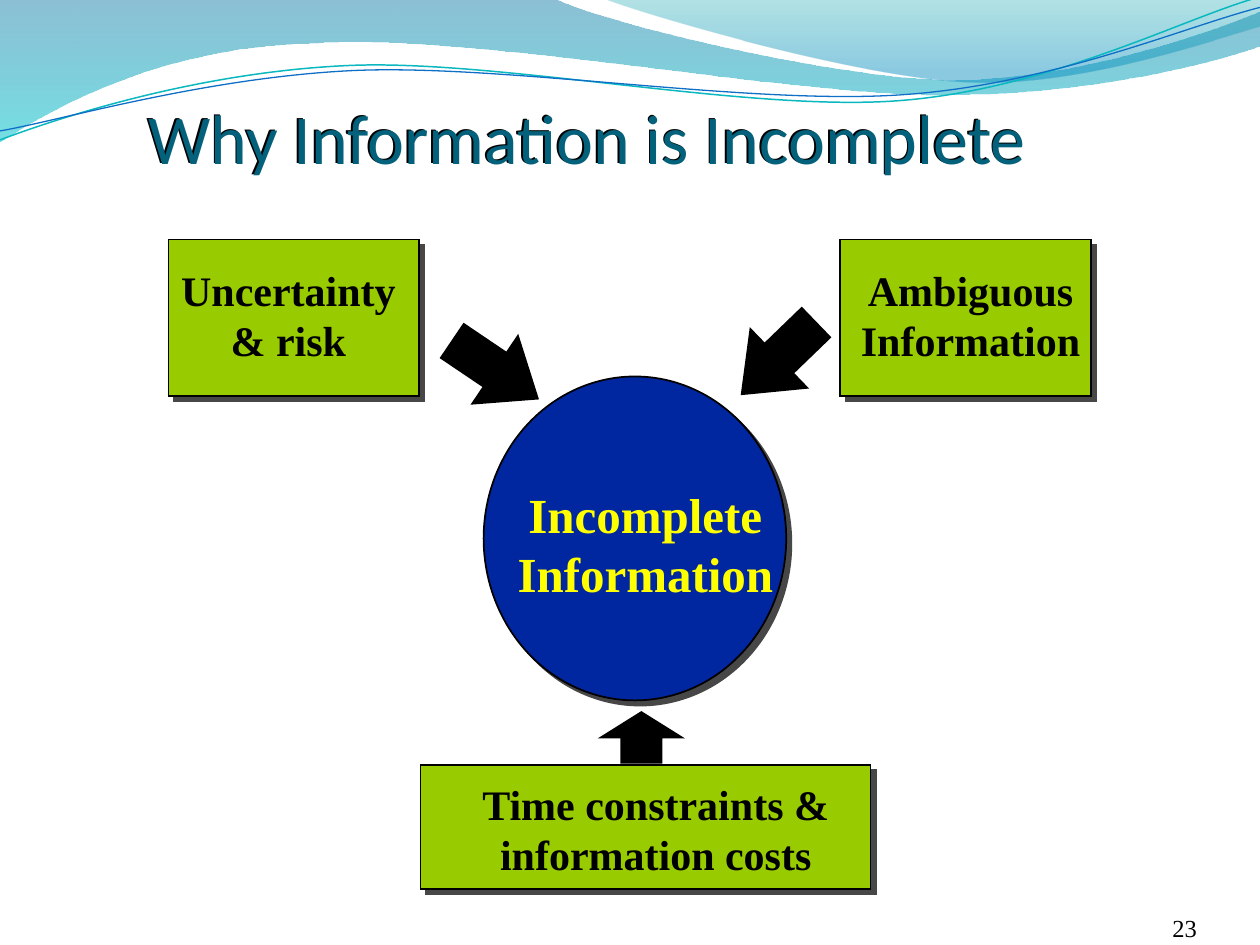
from math import cos, radians, sin

from pptx import Presentation
from pptx.dml.color import RGBColor
from pptx.enum.shapes import MSO_SHAPE
from pptx.enum.text import MSO_ANCHOR, MSO_AUTO_SIZE, PP_ALIGN
from pptx.oxml import parse_xml
from pptx.oxml.ns import nsdecls, qn
from pptx.util import Cm, Pt

SERIF = "Times New Roman"
BLACK, GREEN, BLUE, YELLOW = "000000", "99CC00", "00279F", "FFFF00"
TEAL = "04617B"

# Waves in cm: a pair is a straight step, six numbers are a Bezier curve
BROAD_WAVE = [
    (0, 0), (11.18, -0.03),
    (12.09, 0.43, 16.87, 1.6, 19.25, 1.6),
    (21.67, 1.6, 24.33, 0.66, 25.4, 0.23), (25.43, 0.91),
    (24.97, 1.12, 22.1, 1.93, 18.95, 1.91),
    (15.8, 1.91, 9.7, 0.71, 6.53, 0.86),
    (3.28, 0.91, 1.17, 2.11, -0.03, 2.87), (0, 0)]
RIGHT_WAVE = [
    (12.17, -0.03),
    (12.93, 0.28, 17.32, 1.57, 19.53, 1.65),
    (21.74, 1.75, 24.41, 0.81, 25.4, 0.53), (25.4, 0), (12.17, -0.03)]
UPPER_STRAND = [
    (0, 2.82),
    (1.22, 2.36, 4.01, 1.45, 7.04, 1.32),
    (10.03, 1.19, 15.06, 2.26, 18.11, 2.03),
    (21.16, 1.8, 23.83, 0.38, 25.35, -0.05)]
LOWER_STRAND = [
    (0, 2.64),
    (1.19, 2.44, 4.17, 1.55, 7.19, 1.42),
    (10.24, 1.3, 15.16, 2.13, 18.21, 1.91),
    (21.23, 1.7, 23.9, 0.53, 25.4, 0.15)]


def rgb(value):
    return RGBColor.from_string(value)


def style_text(frame, text, size, color, font, align, bold=False):
    frame.text = text
    for paragraph in frame.paragraphs:
        paragraph.alignment = align
        for run in paragraph.runs:
            run.font.name, run.font.size, run.font.bold = font, Pt(size), bold
            run.font.color.rgb = rgb(color)


def paint(shape, fill):
    shape.shadow.inherit = False
    shape.fill.solid()
    shape.fill.fore_color.rgb = rgb(fill)
    shape.line.color.rgb = rgb(BLACK)
    shape.line.width = Pt(1)
    shape.element.spPr.find(qn("a:ln")).append(
        parse_xml(f'<a:miter {nsdecls("a")} lim="800000"/>'))


def cast_shadow(shape, color, distance, angle):
    shape.shadow.inherit = False
    shape.element.spPr.find(qn("a:effectLst")).append(parse_xml(
        f'<a:outerShdw {nsdecls("a")} blurRad="0" dist="{Pt(distance)}" '
        f'dir="{angle * 60000}" algn="ctr" rotWithShape="0">'
        f'<a:srgbClr val="{color}"/></a:outerShdw>'))


def turn(point, center, degrees):
    dx, dy = point[0] - center[0], point[1] - center[1]
    c, s = cos(radians(degrees)), sin(radians(degrees))
    return center[0] + dx * c - dy * s, center[1] + dx * s + dy * c


def add_outline(slide, box, segments, close, tilt=0, center=(0, 0)):
    left, top = box
    points = [turn(pair, center, -tilt)
              for segment in segments for pair in zip(segment[::2], segment[1::2])]
    corners = [(Cm(left + x), Cm(top + y)) for x, y in points]
    builder = slide.shapes.build_freeform(*corners[0])
    builder.add_line_segments(corners[1:], close=close)
    outline = builder.convert_to_shape()
    outline.shadow.inherit = False
    outline.rotation = tilt

    # Join the three steps of each curve into one Bezier step
    steps = iter(list(outline.element.iter(qn("a:lnTo"))))
    for segment in segments[1:]:
        step = next(steps)
        if len(segment) == 6:
            curve = parse_xml(f'<a:cubicBezTo {nsdecls("a")}/>')
            step.addprevious(curve)
            for part in (step, next(steps), next(steps)):
                curve.append(part[0])
                part.getparent().remove(part)
    return outline


def add_waves(slide, box):
    # Translucent bands: (position, colour, opacity in percent)
    bands = [
        (BROAD_WAVE, [(0, "0074A1", 45), (1, "00C6CF", 55)]),
        (RIGHT_WAVE, [(0, "00A1A9", 30), (0.8, "008BBF", 45)])]
    for segments, stops in bands:
        band = add_outline(slide, box, segments, close=True)
        band.line.fill.background()
        band.fill.gradient()
        band.fill.gradient_angle = 270
        for stop, (position, color, _) in zip(band.fill.gradient_stops, stops):
            stop.position = position
            stop.color.rgb = rgb(color)
        gradient = band.element.spPr.find(qn("a:gradFill"))
        for color_node, (_, _, opacity) in zip(gradient.iter(qn("a:srgbClr")), stops):
            color_node.append(parse_xml(
                f'<a:alpha {nsdecls("a")} val="{opacity * 1000}"/>'))

    # Thin tilted strands
    for segments, color, width, center in [
            (UPPER_STRAND, "0AB8BF", 0.85, (12.67, 1.46)),
            (LOWER_STRAND, "0F6FC6", 0.75, (12.69, 1.5))]:
        strand = add_outline(slide, box, segments, False, 357.3, center)
        strand.fill.background()
        strand.line.color.rgb = rgb(color)
        strand.line.width = Pt(width)


def add_title(slide, box):
    title = slide.shapes.title
    title.element.getparent().append(title.element)  # in front of the waves
    title.left, title.top, title.width, title.height = map(Cm, box)
    frame = title.text_frame
    frame.vertical_anchor = MSO_ANCHOR.BOTTOM
    frame.auto_size = MSO_AUTO_SIZE.NONE
    style_text(frame, "Why Information is Incomplete", 40, TEAL, "Calibri", PP_ALIGN.LEFT)
    cast_shadow(title, BLACK, 1.4, 225)


def add_node(slide, origin, kind, box, fill):
    left, top = origin
    x, y, width, height = box
    node = slide.shapes.add_shape(
        kind, Cm(left + x), Cm(top + y), Cm(width), Cm(height))
    paint(node, fill)
    cast_shadow(node, "474747", 4.2, 45)


def add_label(slide, origin, box, text, size, color):
    left, top = origin
    x, y, width, height = box
    label = slide.shapes.add_textbox(
        Cm(left + x), Cm(top + y), Cm(width), Cm(height)).text_frame
    label.word_wrap = False
    label.auto_size = MSO_AUTO_SIZE.SHAPE_TO_FIT_TEXT
    style_text(label, text, size, color, SERIF, PP_ALIGN.CENTER, bold=True)


def add_diagram(slide, origin):
    # Result in the middle, causes around it
    add_node(slide, origin, MSO_SHAPE.OVAL, (6.35, 2.76, 6.1, 6.53), BLUE)
    for box in [(0, 0, 5.05, 3.15), (13.54, 0, 5.05, 3.15), (5.08, 10.59, 9.07, 2.51)]:
        add_node(slide, origin, MSO_SHAPE.RECTANGLE, box, GREEN)

    # Names of the causes
    for text, box in [
            ("Uncertainty\n& risk", (0, 0.37, 4.83, 2.29)),
            ("Ambiguous\nInformation", (13.7, 0.37, 4.93, 2.29)),
            ("Time constraints &\ninformation costs", (6.06, 10.74, 7.52, 2.29))]:
        add_label(slide, origin, box, text, 24, BLACK)

    # Arrows from causes to result: box, rotation, head length
    left, top = origin
    for (x, y, width, height), rotation, head in [
            ((5.54, 1.8, 2.08, 1.65), 34, 0.63),
            ((11.26, 1.57, 2.08, 1.65), 136, 0.63),
            ((9.02, 9.22, 1.02, 1.63), 270, 0.5)]:
        arrow = slide.shapes.add_shape(
            MSO_SHAPE.RIGHT_ARROW, Cm(left + x), Cm(top + y), Cm(width), Cm(height))
        arrow.adjustments[1] = head
        arrow.rotation = rotation
        paint(arrow, BLACK)

    # Name of the result
    add_label(slide, origin, (6.78, 4.82, 5.66, 2.62),
              "Incomplete\nInformation", 28, YELLOW)


def add_page_number(slide, box):
    frame = slide.shapes.add_textbox(*map(Cm, box)).text_frame
    frame.margin_left = frame.margin_right = frame.margin_top = frame.margin_bottom = 0
    frame.word_wrap = True
    frame.vertical_anchor = MSO_ANCHOR.BOTTOM
    style_text(frame, "23", 14, BLACK, SERIF, PP_ALIGN.RIGHT)


def main():
    deck = Presentation()
    deck.slide_width, deck.slide_height = Cm(25.4), Cm(19.05)
    slide = deck.slides.add_slide(deck.slide_layouts[5])
    add_waves(slide, (0, 0))
    add_page_number(slide, (22.02, 17.98, 2.11, 1.02))
    add_title(slide, (2.74, 0.91, 20.27, 2.82))
    add_diagram(slide, (3.4, 4.83))
    deck.save("out.pptx")


if __name__ == "__main__":
    main()
